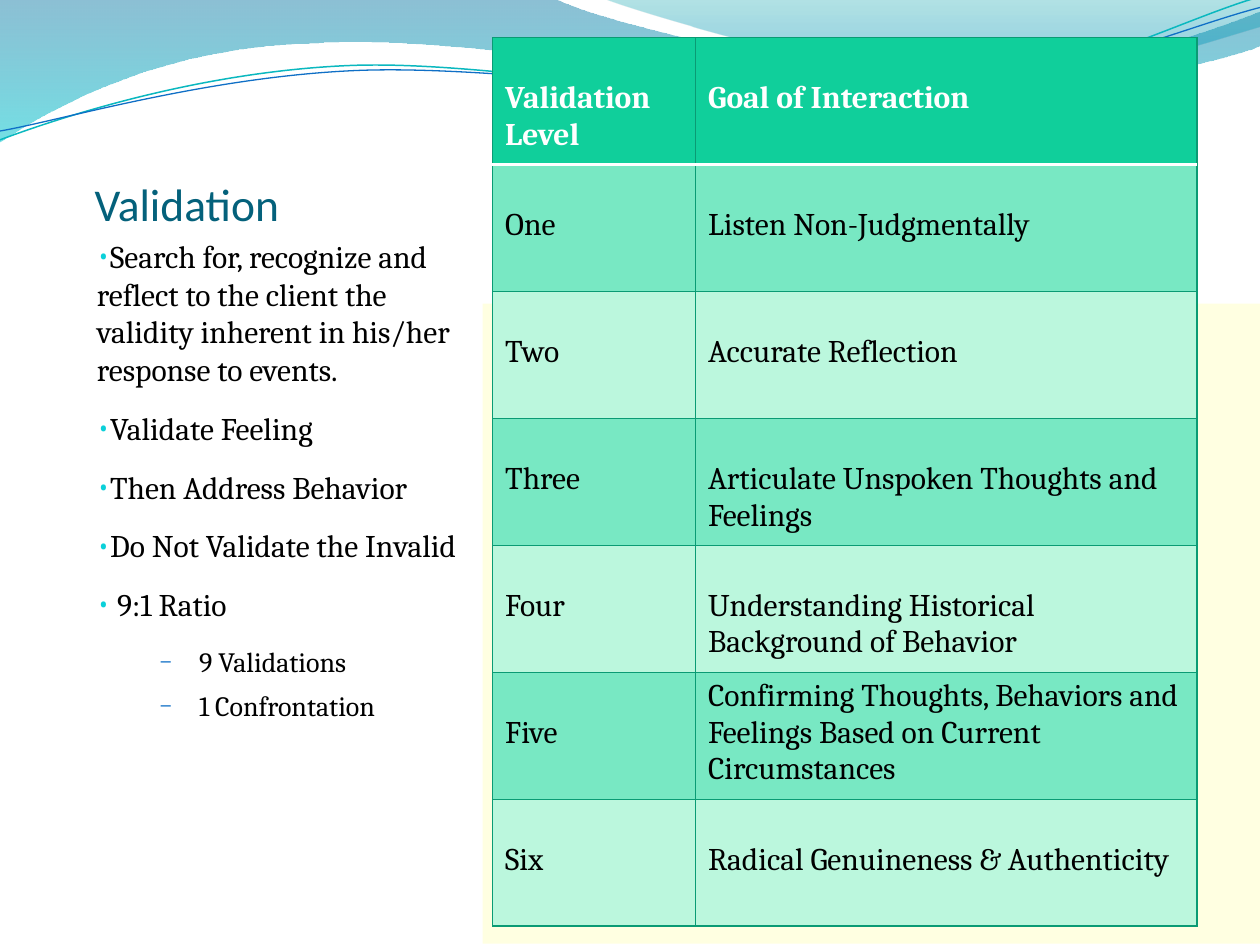
from dataclasses import dataclass
from math import cos, radians, sin

from lxml import etree
from pptx import Presentation
from pptx.dml.color import RGBColor
from pptx.enum.shapes import MSO_SHAPE
from pptx.enum.text import MSO_ANCHOR, MSO_AUTO_SIZE, PP_ALIGN
from pptx.oxml.ns import qn
from pptx.util import Inches, Pt

RECTANGLE = MSO_SHAPE.RECTANGLE
TOP, BOTTOM = MSO_ANCHOR.TOP, MSO_ANCHOR.BOTTOM
NO_AUTOFIT = MSO_AUTO_SIZE.NONE
LEFT = PP_ALIGN.LEFT


@dataclass(frozen=True)
class Theme:
    heading_font: str = "Calibri"
    body_font: str = "Cambria"
    title_size: int = 26
    body_size: int = 18
    detail_size: int = 16
    title: str = "04617B"
    text: str = "000000"
    white: str = "FFFFFF"
    panel: str = "FFFF99"
    header: str = "10CF9B"
    odd_row: str = "78E8C3"
    even_row: str = "BBF7DD"
    border: str = "0A9B74"
    bullet: str = "0BD0D9"
    dash: str = "0F6FC6"
    teal_line: str = "0AB8BF"


theme = Theme()
rgb = RGBColor.from_string

deck = Presentation()
deck.slide_width, deck.slide_height = Inches(10), Inches(7.5)
COLUMN = deck.slide_width / 10
ROW = deck.slide_height / 7.5
page = deck.slides.add_slide(deck.slide_layouts[5])


def trace(start, segments, closed):
    points = [(x * COLUMN, y * ROW) for segment in segments for x, y in segment]
    builder = page.shapes.build_freeform(start[0] * COLUMN, start[1] * ROW)
    builder.add_line_segments(points, close=closed)
    shape = builder.convert_to_shape()
    shape.shadow.inherit = False
    lines = iter(list(shape._element.spPr.iter(qn("a:lnTo"))))
    for segment in segments:
        first, *others = [next(lines) for point in segment]
        if others:
            curve = etree.Element(qn("a:cubicBezTo"))
            first.addprevious(curve)
            for line in (first, *others):
                curve.append(line[0])
                line.getparent().remove(line)
    return shape


def set_opacity(shape, percentages):
    colours = shape._element.spPr.iter(qn("a:srgbClr"))
    for colour, percentage in zip(colours, percentages):
        etree.SubElement(colour, qn("a:alpha"), val=str(percentage * 1000))


waves = [
    ((0, 0),
     [[(4.4, -0.01)],
      [(4.76, 0.17), (6.64, 0.63), (7.58, 0.63)],
      [(8.53, 0.63), (9.58, 0.26), (10, 0.09)],
      [(10.01, 0.36)],
      [(9.83, 0.44), (8.7, 0.76), (7.46, 0.75)],
      [(6.22, 0.75), (3.82, 0.28), (2.57, 0.34)],
      [(1.29, 0.36), (0.46, 0.83), (-0.01, 1.13)],
      [(0, 0)]],
     [(0, "0074A1", 45), (1, "00C6CF", 55)]),
    ((4.79, -0.01),
     [[(5.09, 0.11), (6.82, 0.62), (7.69, 0.65)],
      [(8.56, 0.69), (9.61, 0.32), (10, 0.21)],
      [(10, 0)],
      [(4.79, -0.01)]],
     [(0, "00A1A9", 30), (0.8, "008BBF", 45)]),
]
for start, segments, stops in waves:
    wave = trace(start, segments, True)
    wave.line.fill.background()
    wave.fill.gradient()
    wave.fill.gradient_angle = 270
    for stop, (position, colour, opacity) in zip(wave.fill.gradient_stops, stops):
        stop.position = position
        stop.color.rgb = rgb(colour)
    set_opacity(wave, [opacity for position, colour, opacity in stops])

TILT = 2.7
ripples = [
    ((4.99, 0.58), (0, 1.11),
     [[(0.48, 0.93), (1.58, 0.57), (2.77, 0.52)],
      [(3.95, 0.47), (5.93, 0.89), (7.13, 0.8)],
      [(8.33, 0.71), (9.38, 0.15), (9.98, -0.02)]],
     theme.teal_line, 0.85),
    ((5, 0.59), (0, 1.04),
     [[(0.47, 0.96), (1.64, 0.61), (2.83, 0.56)],
      [(4.03, 0.51), (5.97, 0.84), (7.17, 0.75)],
      [(8.36, 0.67), (9.41, 0.21), (10, 0.06)]],
     theme.dash, 0.75),
]
turn_x, turn_y = cos(radians(TILT)), sin(radians(TILT))
for (middle_x, middle_y), start, segments, colour, width in ripples:
    level_segments = [
        [(middle_x + (x - middle_x) * turn_x - (y - middle_y) * turn_y,
          middle_y + (x - middle_x) * turn_y + (y - middle_y) * turn_x) for x, y in segment]
        for segment in [[start], *segments]]
    ripple = trace(level_segments[0][0], level_segments[1:], False)
    ripple.rotation = 360 - TILT
    ripple.fill.background()
    ripple.line.color.rgb = rgb(colour)
    ripple.line.width = Pt(width)

panel = page.shapes.add_shape(
    RECTANGLE, int(3.83 * COLUMN), int(2.41 * ROW), int(6.17 * COLUMN), int(5.08 * ROW))
panel.shadow.inherit = False
panel.fill.solid()
panel.fill.fore_color.rgb = rgb(theme.panel)
panel.line.fill.background()
set_opacity(panel, [29])

title = page.shapes.title
title.left, title.top = int(0.75 * COLUMN), int(0.56 * ROW)
title.width, title.height = int(3 * COLUMN), int(1.27 * ROW)
frame = title.text_frame
frame.text = "Validation"
frame.auto_size = NO_AUTOFIT
frame.vertical_anchor = BOTTOM
frame.margin_left = frame.margin_right = frame.margin_bottom = 0
frame.paragraphs[0].alignment = LEFT
font = frame.paragraphs[0].runs[0].font
font.name, font.size = theme.heading_font, Pt(theme.title_size)
font.color.rgb = rgb(theme.title)

levels = [
    ("Validation\nLevel", "Goal of Interaction"),
    ("One", "Listen Non-Judgmentally"),
    ("Two", "Accurate Reflection"),
    ("Three", "Articulate Unspoken Thoughts and Feelings"),
    ("Four", "Understanding Historical Background of Behavior"),
    ("Five", "Confirming Thoughts, Behaviors and Feelings Based on Current Circumstances"),
    ("Six", "Radical Genuineness & Authenticity"),
]
three_line_cell = (5, 1)
table = page.shapes.add_table(
    len(levels), 2, int(3.91 * COLUMN), int(0.3 * ROW), int(5.59 * COLUMN), int(7.05 * ROW)).table
for column, width in zip(table.columns, (1.61, 3.98)):
    column.width = int(width * COLUMN)
for r, row in enumerate(levels):
    table.rows[r].height = int(7.05 / len(levels) * ROW)
    for c, wording in enumerate(row):
        cell = table.cell(r, c)
        cell.text = wording
        cell.vertical_anchor = TOP
        cell.margin_top = Inches(0.05 if (r, c) == three_line_cell else 0.34)
        for para in cell.text_frame.paragraphs:
            font = para.runs[0].font
            font.name, font.size, font.bold = theme.body_font, Pt(theme.body_size), r == 0
            font.color.rgb = rgb(theme.text if r else theme.white)
        properties = cell._tc.get_or_add_tcPr()
        for side in ("lnL", "lnR", "lnT", "lnB"):
            divider = (r, side) in ((0, "lnB"), (1, "lnT"))
            border = etree.SubElement(properties, qn(f"a:{side}"), w=str(Pt(2 if divider else 0.75)))
            fill = etree.SubElement(border, qn("a:solidFill"))
            etree.SubElement(fill, qn("a:srgbClr"), val=theme.white if divider else theme.border)
        cell.fill.solid()
        band = theme.odd_row if r % 2 else theme.even_row
        cell.fill.fore_color.rgb = rgb(band if r else theme.header)

points = [
    (0, "Search for, recognize and reflect to the client the validity inherent in his/her response to events."),
    (0, "Validate Feeling"),
    (0, "Then Address Behavior"),
    (0, "Do Not Validate the Invalid"),
    (0, " 9:1 Ratio"),
    (1, "9 Validations"),
    (1, "1 Confrontation"),
]
styles = [
    (theme.body_size, 12, 0, 0, "•", theme.bullet, 95),
    (theme.detail_size, 6, 0.81, -0.31, "–", theme.dash, 85),
]
box = page.shapes.add_textbox(int(0.75 * COLUMN), int(1.83 * ROW), int(3 * COLUMN), int(5 * ROW))
frame = box.text_frame
frame.word_wrap = True
frame.margin_left = frame.margin_right = Inches(0.02)
frame.text = "\n".join(wording for level, wording in points)
for para, (level, wording) in zip(frame.paragraphs, points):
    size, gap, margin, indent, mark, colour, scale = styles[level]
    para.level = level
    para.space_after = Pt(gap)
    font = para.runs[0].font
    font.name, font.size = theme.body_font, Pt(size)
    font.color.rgb = rgb(theme.text)
    properties = para._p.get_or_add_pPr()
    properties.set("marL", str(Inches(margin)))
    properties.set("indent", str(Inches(indent)))
    bullet_colour = etree.SubElement(properties, qn("a:buClr"))
    etree.SubElement(bullet_colour, qn("a:srgbClr"), val=colour)
    etree.SubElement(properties, qn("a:buSzPct"), val=str(scale * 1000))
    etree.SubElement(properties, qn("a:buFont"), typeface=theme.body_font)
    etree.SubElement(properties, qn("a:buChar"), char=mark)

deck.save("out.pptx")
